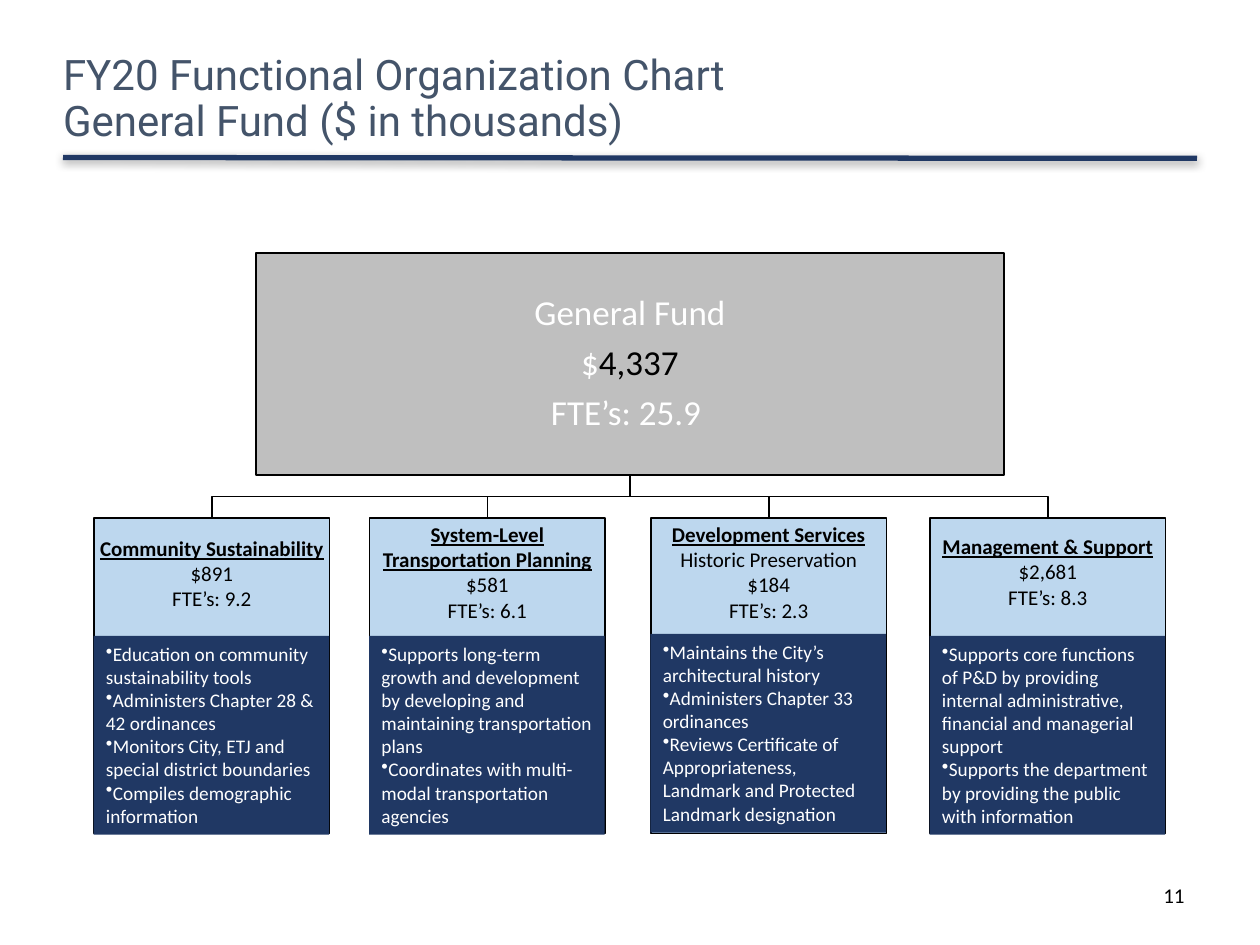
from lxml import etree
from pptx import Presentation
from pptx import util as u
from pptx.dml.color import RGBColor
from pptx.enum import shapes, text
from pptx.oxml import ns, parse_xml

Pt = u.Pt
THEME = {
    "title": {"name": "Roboto", "size": Pt(24), "color": "44546A"},
    "fund": {"name": "Calibri", "size": Pt(20), "color": "FFFFFF"},
    "fund_amount": {"name": "Calibri", "size": Pt(20), "color": "000000"},
    "heading": {"name": "Calibri", "size": Pt(12), "color": "000000",
                "bold": True, "underline": True},
    "figure": {"name": "Calibri", "size": Pt(12), "color": "000000"},
    "duty": {"name": "Calibri", "size": Pt(11), "color": "FFFFFF"},
    "navy": "203864", "sky": "BDD7EE", "grey": "BFBFBF", "black": "000000",
}

prs = Presentation()
prs.slide_width, prs.slide_height = Pt(720), Pt(540)
slide = prs.slides.add_slide(prs.slide_layouts[5])


def add_text(paragraph, words, role):
    run = paragraph.add_run()
    run.text = words
    for key, value in THEME[role].items():
        if key == "color":
            run.font.color.rgb = RGBColor.from_string(value)
        else:
            setattr(run.font, key, value)


def add_box(left, top, width, height, fill, outlined=True):
    box = slide.shapes.add_shape(
        shapes.MSO_SHAPE.RECTANGLE, Pt(left), Pt(top), Pt(width), Pt(height))
    box.shadow.inherit = False
    box.fill.solid()
    box.fill.fore_color.rgb = RGBColor.from_string(THEME[fill])
    if outlined:
        box.line.color.rgb = RGBColor.from_string(THEME["black"])
        box.line.width = Pt(1)
    else:
        box.line.fill.background()
    return box


# Title
title = slide.shapes.title
title_place = {"left": Pt(36), "top": Pt(24), "width": Pt(494), "height": Pt(66)}
for key, value in title_place.items():
    setattr(title, key, value)
title_frame = {"margin_left": 0, "margin_right": 0, "margin_top": 0, "margin_bottom": 0,
               "vertical_anchor": text.MSO_ANCHOR.MIDDLE, "word_wrap": True,
               "auto_size": text.MSO_AUTO_SIZE.NONE}
for key, value in title_frame.items():
    setattr(title.text_frame, key, value)
headline = title.text_frame.paragraphs[0]
headline.alignment, headline.line_spacing = text.PP_ALIGN.LEFT, 0.9
add_text(headline, "FY20 Functional Organization Chart", "title")
headline.add_line_break()
add_text(headline, "General Fund ($ in thousands)", "title")

# Rule below the title, with a soft shadow
title_rule = slide.shapes.add_connector(
    shapes.MSO_CONNECTOR.STRAIGHT, Pt(36), Pt(90), Pt(684), Pt(90.5))
title_rule.line.color.rgb = RGBColor.from_string(THEME["navy"])
title_rule.line.width = Pt(3)
title_rule._element.spPr.append(parse_xml(
    f'<a:effectLst {ns.nsdecls("a")}><a:outerShdw blurRad="{Pt(5)}" dist="{Pt(1.6)}" '
    f'dir="5400000" rotWithShape="0"><a:srgbClr val="{THEME["black"]}">'
    '<a:alpha val="38000"/></a:srgbClr></a:outerShdw></a:effectLst>'))

# Functions: left edge, space above heading, top of duties, heading, figures, duties
functions = [
    (53.8, 10, 363.4, "Community Sustainability", ["$891", "FTE’s: 9.2"], [
        "Education on community sustainability tools",
        "Administers Chapter 28 & 42 ordinances",
        "Monitors City, ETJ and special district boundaries",
        "Compiles demographic information"]),
    (211.2, 2, 363.4, "System-Level Transportation Planning", ["$581", "FTE’s: 6.1"], [
        "Supports long-term growth and development by developing and maintaining "
        "transportation plans",
        "Coordinates with multi-modal transportation agencies"]),
    (372, 2, 362.2, "Development Services",
     ["Historic Preservation", "$184", "FTE’s: 2.3"], [
        "Maintains the City’s architectural history",
        "Administers Chapter 33 ordinances",
        "Reviews Certificate of Appropriateness, Landmark and Protected Landmark designation"]),
    (531.5, 9, 363.4, "Management & Support", ["$2,681", "FTE’s: 8.3"], [
        "Supports core functions of P&D by providing internal administrative, financial "
        "and managerial support",
        "Supports the department by providing the public with information"]),
]
card_width, card_top, card_height, duties_height = 134.6, 296, 180.4, 113.6
fund_center, fund_top, fund_height = 360, 144.7, 126.7
fund_bottom = fund_top + fund_height
bus_y = (fund_bottom + card_top) / 2

# Elbow branches from the fund to each function
for left, *_ in reversed(functions):
    center = left + card_width / 2
    builder = slide.shapes.build_freeform(Pt(fund_center), Pt(fund_bottom))
    builder.add_line_segments(
        [(Pt(fund_center), Pt(bus_y)), (Pt(center), Pt(bus_y)), (Pt(center), Pt(card_top))],
        close=False)
    branch = builder.convert_to_shape()
    branch.shadow.inherit = False
    branch.fill.background()
    branch.line.color.rgb = RGBColor.from_string(THEME["black"])
    branch.line.width = Pt(1)

# General Fund box
fund = add_box(146.4, fund_top, 427.2, fund_height, "grey")
fund.text_frame.vertical_anchor = text.MSO_ANCHOR.MIDDLE
fund_lines = [
    [("General Fund", "fund")],
    [("$", "fund"), ("4,337", "fund_amount")],
    [("FTE’s: 25.9 ", "fund")],
]
for index, parts in enumerate(fund_lines):
    paragraph = fund.text_frame.paragraphs[0] if index == 0 else fund.text_frame.add_paragraph()
    paragraph.alignment, paragraph.line_spacing = text.PP_ALIGN.CENTER, 0.9
    paragraph.space_before = Pt(7 if index else 0)
    for words, role in parts:
        add_text(paragraph, words, role)

for left, inset, duties_top, heading, figures, duties in functions:
    # Card with heading and figures
    card = add_box(left, card_top, card_width, card_height, "sky")
    card_frame = {"margin_left": Pt(0.7), "margin_right": Pt(0.7), "margin_top": Pt(inset),
                  "vertical_anchor": text.MSO_ANCHOR.TOP, "word_wrap": True}
    for key, value in card_frame.items():
        setattr(card.text_frame, key, value)
    for index, words in enumerate([heading] + figures):
        paragraph = card.text_frame.paragraphs[0] if index == 0 else card.text_frame.add_paragraph()
        paragraph.alignment = text.PP_ALIGN.CENTER
        add_text(paragraph, words, "figure" if index else "heading")

    # Duties panel
    panel = add_box(left - 0.3, duties_top, card_width, duties_height, "navy", outlined=False)
    panel.text_frame.vertical_anchor = text.MSO_ANCHOR.TOP
    for index, duty in enumerate(duties):
        paragraph = panel.text_frame.paragraphs[0] if index == 0 else panel.text_frame.add_paragraph()
        properties = paragraph._p.get_or_add_pPr()
        etree.SubElement(properties, ns.qn("a:buFontTx"))
        etree.SubElement(properties, ns.qn("a:buChar")).set("char", "•")
        paragraph.alignment = text.PP_ALIGN.LEFT
        add_text(paragraph, duty, "duty")

# Page number
page_number = slide.shapes.add_textbox(Pt(516), Pt(500.5), Pt(168), Pt(29))
page_number.text_frame.word_wrap = True
number_line = page_number.text_frame.paragraphs[0]
number_line.alignment = text.PP_ALIGN.RIGHT
add_text(number_line, "11", "figure")

prs.save("out.pptx")
